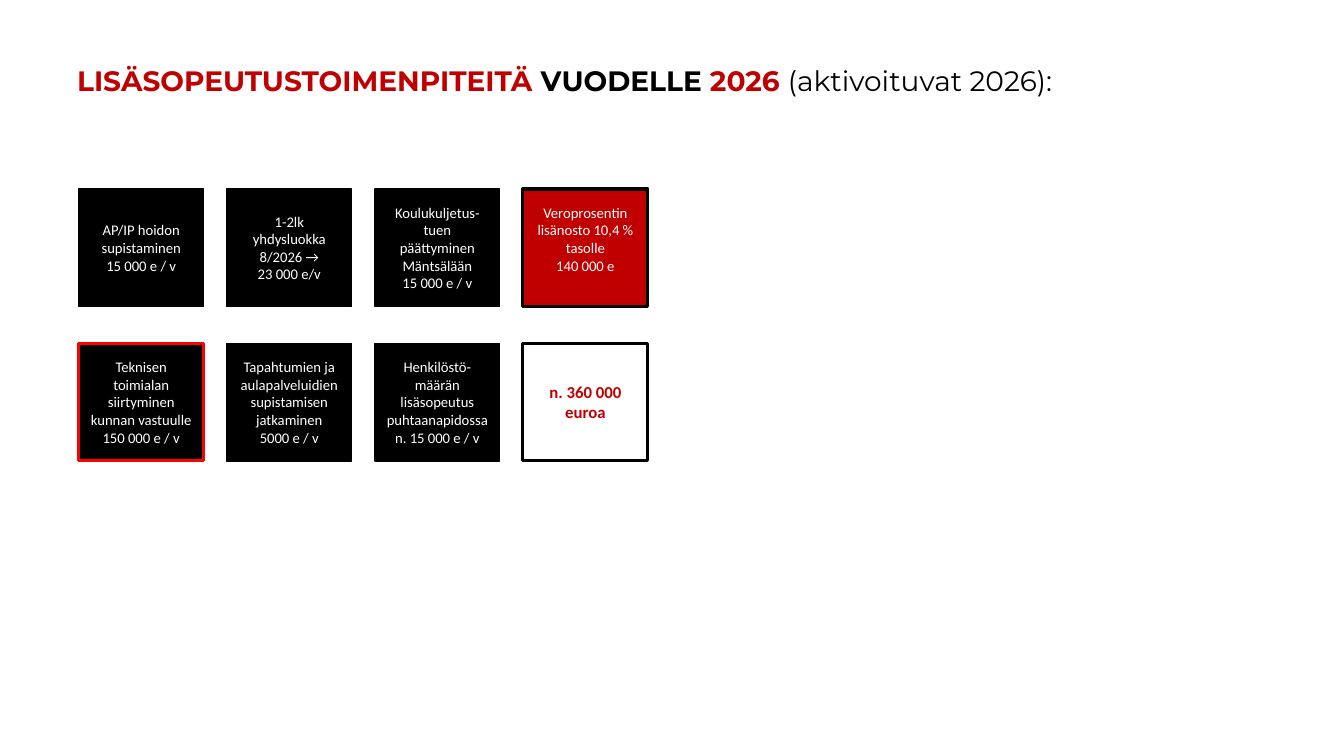
from dataclasses import dataclass

from pptx import Presentation
from pptx.dml.color import RGBColor
from pptx.enum.shapes import MSO_SHAPE
from pptx.enum.text import MSO_ANCHOR, MSO_AUTO_SIZE, PP_ALIGN
from pptx.util import Pt

RECT = MSO_SHAPE.RECTANGLE
MIDDLE = MSO_ANCHOR.MIDDLE
CENTER = PP_ALIGN.CENTER
GROW = MSO_AUTO_SIZE.SHAPE_TO_FIT_TEXT

SCALE = 9525  # EMU per px
BLACK, WHITE, RED, BRIGHT = "000000", "FFFFFF", "C00000", "FF0000"

# Card grid, in px
LEFT, TOP = 75, 180
STEP_X, STEP_Y = 141, 147
WIDTH, HEIGHT = 119, 112
COLS = 4


@dataclass
class Card:
    lines: list[str]
    fill: str = BLACK
    edge: str = BLACK
    weight: float = 1
    ink: str = WHITE
    size: float = 10.5
    bold: bool = False
    foot: int = 5  # bottom inset


CARDS = [
    Card(["AP/IP hoidon supistaminen", "15 000 e / v"]),
    Card(["1-2lk yhdysluokka 8/2026 →", "23 000 e/v"]),
    Card(["Koulukuljetus-tuen päättyminen Mäntsälään", "15 000 e / v"]),
    Card(["Veroprosentin lisänosto 10,4 % tasolle", "140 000 e"],
         fill=RED, weight=2.25, foot=22),
    Card(["Teknisen toimialan siirtyminen kunnan vastuulle 150 000 e / v"],
         edge=BRIGHT, weight=2.25),
    Card(["Tapahtumien ja aulapalveluidien supistamisen jatkaminen",
          "5000 e / v"]),
    Card(["Henkilöstö-määrän lisäsopeutus puhtaanapidossa n. 15 000 e / v"]),
    Card(["n. 360 000 euroa"],
         fill=WHITE, weight=2.25, ink=RED, size=12, bold=True),
]

# Title runs: text, colour, bold
TITLE = [
    ("LISÄSOPEUTUSTOIMENPITEITÄ", RED, True),
    (" VUODELLE ", BLACK, True),
    ("2026 ", RED, True),
    ("(aktivoituvat 2026):", BLACK, False),
]


def px(n: int) -> int:
    return n * SCALE


def color(code: str) -> RGBColor:
    return RGBColor.from_string(code)


def add_run(para, text: str, ink: str, **look) -> None:
    run = para.add_run()
    run.text = text
    for key, value in look.items():
        setattr(run.font, key, value)
    run.font.color.rgb = color(ink)


def add_title(slide) -> None:
    box = slide.shapes.add_textbox(px(64), px(56), px(1167), px(42))
    frame = box.text_frame
    frame.word_wrap = True
    frame.auto_size = GROW
    for text, ink, bold in TITLE:
        add_run(frame.paragraphs[0], text, ink,
                name="Montserrat", size=Pt(20), bold=bold)


def add_card(slide, card: Card, row: int, col: int) -> None:
    shape = slide.shapes.add_shape(
        RECT, px(LEFT + col * STEP_X), px(TOP + row * STEP_Y),
        px(WIDTH), px(HEIGHT))
    shape.shadow.inherit = False
    shape.fill.solid()
    shape.fill.fore_color.rgb = color(card.fill)
    shape.line.color.rgb = color(card.edge)
    shape.line.width = Pt(card.weight)

    frame = shape.text_frame
    layout = {"word_wrap": True, "vertical_anchor": MIDDLE,
              "margin_bottom": px(card.foot)}
    for key, value in layout.items():
        setattr(frame, key, value)
    for i, line in enumerate(card.lines):
        para = frame.add_paragraph() if i else frame.paragraphs[0]
        para.alignment = CENTER
        add_run(para, line, card.ink, name="Calibri",
                size=Pt(card.size), bold=card.bold)


def main() -> None:
    deck = Presentation()
    deck.slide_width, deck.slide_height = px(1280), px(720)
    slide = deck.slides.add_slide(deck.slide_layouts[6])
    add_title(slide)
    for i, card in enumerate(CARDS):
        add_card(slide, card, *divmod(i, COLS))
    deck.save("out.pptx")


if __name__ == "__main__":
    main()
